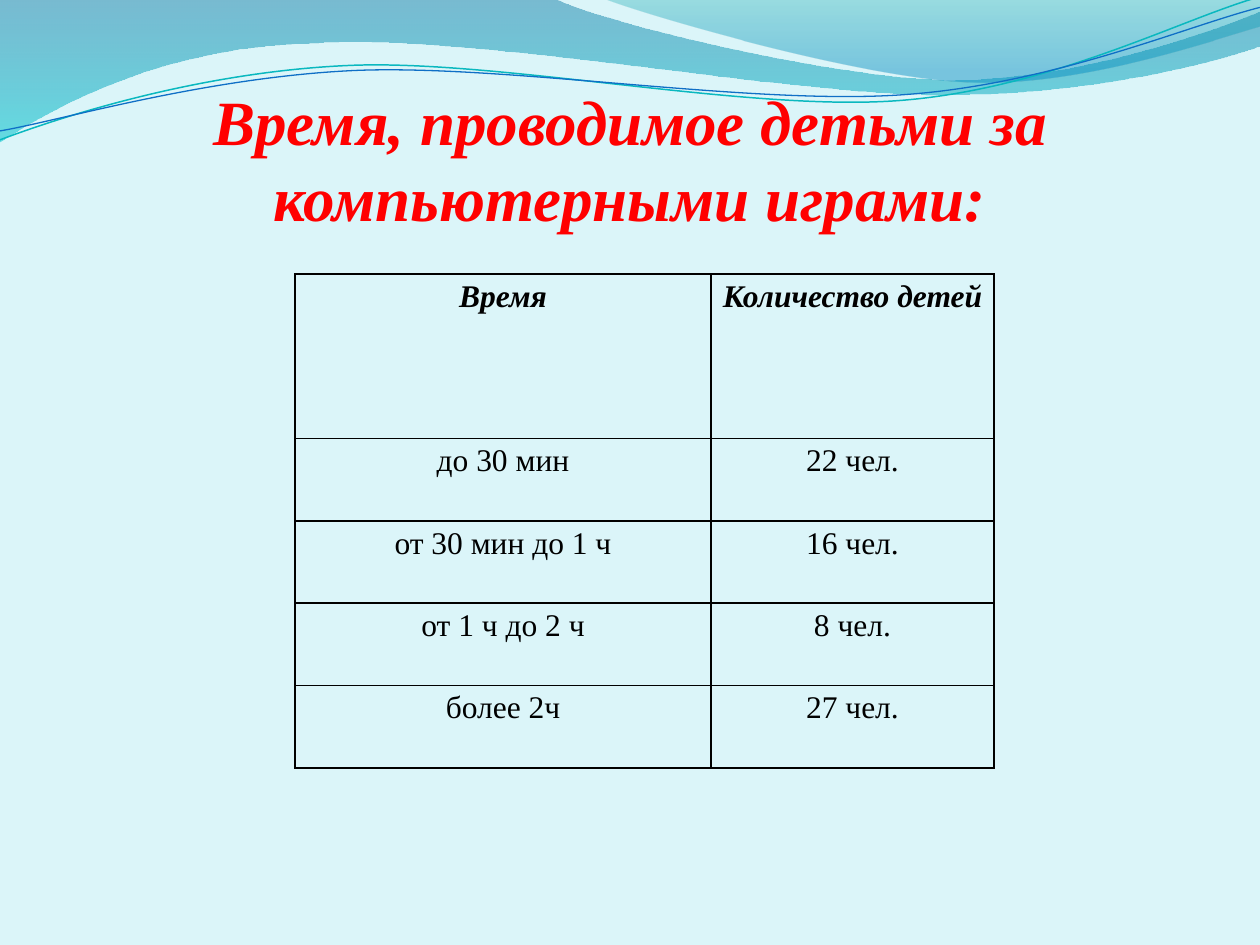
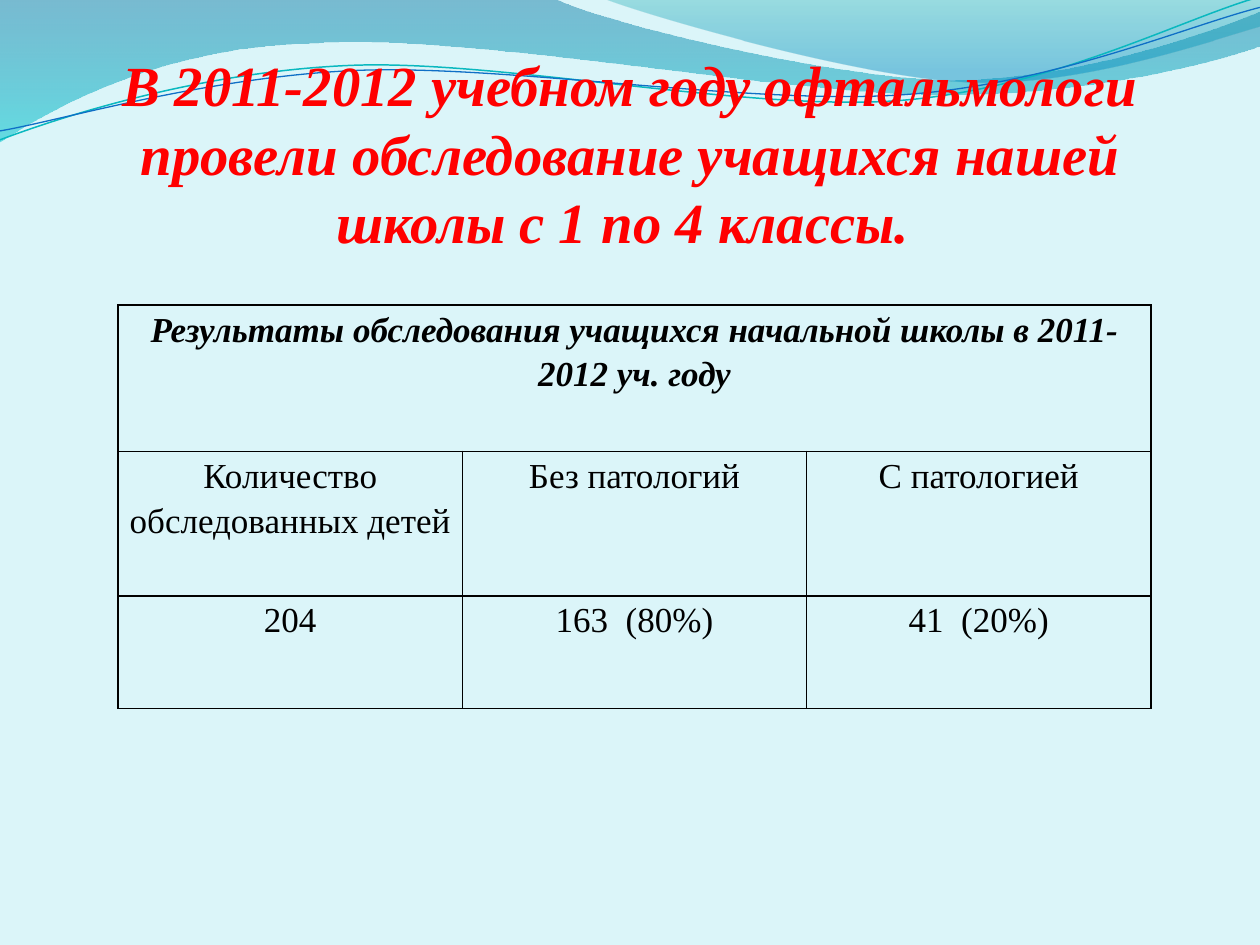
from dataclasses import dataclass

from lxml.etree import SubElement
from pptx import Presentation
from pptx.dml.color import RGBColor
from pptx.enum.text import MSO_ANCHOR, MSO_AUTO_SIZE, PP_ALIGN
from pptx.oxml.ns import qn
from pptx.util import Cm, Pt

FONT = "Times New Roman"
BACKGROUND = "DBF5F9"
TITLE_RED = "FF0000"
BLACK = "000000"

Point = tuple[float, float]
Segment = tuple[Point, ...]  # one point is a straight line, three a Bézier curve


@dataclass
class GradientStop:
    position: float
    color: str
    opacity: int


@dataclass
class Wave:
    """A band with a gradient, or an open line; points in centimetres."""
    start: Point
    segments: list[Segment]
    stops: tuple[GradientStop, ...] = ()
    line_color: str = ""
    line_width: float = 0


@dataclass
class TableSlide:
    title: str
    title_size: float
    title_top: float
    title_height: float
    table_left: float
    table_top: float
    column_widths: list[float]
    row_heights: list[float]
    font_size: int
    rows: list[list[str]]


WAVES = [
    Wave((0, 0),
         [((11.18, -0.03),),
          ((12.09, 0.43), (16.87, 1.6), (19.25, 1.6)),
          ((21.67, 1.6), (24.33, 0.66), (25.4, 0.23)),
          ((25.43, 0.91),),
          ((24.97, 1.12), (22.1, 1.93), (18.95, 1.91)),
          ((15.8, 1.91), (9.7, 0.71), (6.53, 0.86)),
          ((3.28, 0.91), (1.17, 2.11), (-0.03, 2.87)),
          ((0, 0),)],
         stops=(GradientStop(0, "0074A1", 45), GradientStop(1, "00C6CF", 55))),
    Wave((12.17, -0.03),
         [((12.93, 0.28), (17.32, 1.57), (19.53, 1.65)),
          ((21.74, 1.75), (24.41, 0.81), (25.4, 0.53)),
          ((25.4, 0),),
          ((12.17, -0.03),)],
         stops=(GradientStop(0, "00A1A9", 30), GradientStop(0.8, "008BBF", 45))),
    Wave((0, 2.82),
         [((1.22, 2.36), (4.01, 1.45), (7.04, 1.32)),
          ((10.03, 1.19), (15.06, 2.26), (18.11, 2.03)),
          ((21.16, 1.8), (23.83, 0.38), (25.35, -0.05))],
         line_color="0AB8BF", line_width=0.85),
    Wave((0, 2.64),
         [((1.19, 2.44), (4.17, 1.55), (7.19, 1.42)),
          ((10.24, 1.3), (15.16, 2.13), (18.21, 1.91)),
          ((21.23, 1.7), (23.9, 0.53), (25.4, 0.15))],
         line_color="0F6FC6", line_width=0.75),
]

TABLE_SLIDES = [
    TableSlide(
        "Время, проводимое детьми за компьютерными играми:", 36, 1.52, 3.2,
        5.95, 5.52, [8.38, 5.71], [3.32] + [1.66] * 4, 18,
        [["Время", "Количество детей"],
         ["до 30 мин", "22 чел."],
         ["от 30 мин до 1 ч", "16 чел."],
         ["от 1 ч до 2 ч", "8 чел."],
         ["более 2ч", "27 чел."]]),
    TableSlide(
        "В 2011-2012 учебном году офтальмологи провели обследование учащихся "
        "нашей школы с 1 по 4 классы. ", 32.4, 0.91, 4.22,
        2.38, 6.15, [6.94] * 3, [2.95, 2.91, 2.27], 20,
        [["Результаты обследования учащихся начальной школы в 2011-2012 уч. году"],
         ["Количество обследованных детей", "Без патологий", "С патологией"],
         ["204", "163  (80%)", "41  (20%)"]]),
]


def rgb(color: str) -> RGBColor:
    return RGBColor.from_string(color)


def bend_curves(shape, segments: list[Segment]) -> None:
    """Join each three straight steps of a curved segment into one Bézier curve."""
    steps = shape.element.iter(qn("a:lnTo"))
    steps = iter(list(steps))
    for segment in segments:
        first, *others = [next(steps) for _ in segment]
        if others:
            first.tag = qn("a:cubicBezTo")
        for step in others:
            first.extend(list(step))
            step.getparent().remove(step)


def draw_wave(slide, wave: Wave):
    start_x, start_y = wave.start
    builder = slide.shapes.build_freeform(Cm(start_x), Cm(start_y))
    builder.add_line_segments(
        [(Cm(x), Cm(y)) for segment in wave.segments for x, y in segment],
        close=bool(wave.stops))
    shape = builder.convert_to_shape()
    bend_curves(shape, wave.segments)
    shape.shadow.inherit = False
    if not wave.stops:
        shape.fill.background()
        shape.line.color.rgb = rgb(wave.line_color)
        shape.line.width = Pt(wave.line_width)
        return shape
    shape.line.fill.background()
    shape.fill.gradient()
    shape.fill.gradient_angle = 270
    for gradient_stop, stop in zip(shape.fill.gradient_stops, wave.stops):
        gradient_stop.position = stop.position
        gradient_stop.color.rgb = rgb(stop.color)
    for color, stop in zip(shape.element.iter(qn("a:srgbClr")), wave.stops):
        SubElement(color, qn("a:alpha"), val=str(stop.opacity * 1000))
    return shape


def write(paragraph, text: str, size: float, color: str, emphasis: bool) -> None:
    paragraph.alignment = PP_ALIGN.CENTER
    run = paragraph.add_run()
    run.text = text
    run.font.name = FONT
    run.font.size = Pt(size)
    run.font.bold = run.font.italic = emphasis
    run.font.color.rgb = rgb(color)


def place_title(slide, content: TableSlide) -> None:
    title = slide.shapes.title
    title.left, title.top = Cm(1.27), Cm(content.title_top)
    title.width, title.height = Cm(22.86), Cm(content.title_height)
    frame = title.text_frame
    frame.word_wrap = True
    frame.auto_size = MSO_AUTO_SIZE.NONE
    frame.vertical_anchor = MSO_ANCHOR.BOTTOM
    frame.margin_left = frame.margin_right = frame.margin_bottom = 0
    frame.margin_top = Cm(0.13)
    write(frame.paragraphs[0], content.title, content.title_size, TITLE_RED, True)


def format_cell(cell) -> None:
    cell.margin_left = cell.margin_right = Cm(0.18)
    cell.margin_top = cell.margin_bottom = 0
    cell.vertical_anchor = MSO_ANCHOR.TOP
    properties = cell._tc.get_or_add_tcPr()
    for side in ("a:lnL", "a:lnR", "a:lnT", "a:lnB"):
        border = SubElement(properties, qn(side), w=str(Pt(1)))
        fill = SubElement(border, qn("a:solidFill"))
        SubElement(fill, qn("a:srgbClr"), val=BLACK)
    cell.fill.background()


def add_table(slide, content: TableSlide) -> None:
    widths, heights = content.column_widths, content.row_heights
    table = slide.shapes.add_table(
        len(heights), len(widths), Cm(content.table_left), Cm(content.table_top),
        Cm(sum(widths)), Cm(sum(heights))).table
    table.first_row = table.horz_banding = False
    for column, width in zip(table.columns, widths):
        column.width = Cm(width)
    for row, height in zip(table.rows, heights):
        row.height = Cm(height)
    for cell in table.iter_cells():
        format_cell(cell)
    for row_index, texts in enumerate(content.rows):
        if len(texts) < len(widths):
            table.cell(row_index, 0).merge(table.cell(row_index, len(widths) - 1))
        for column_index, text in enumerate(texts):
            paragraph = table.cell(row_index, column_index).text_frame.paragraphs[0]
            paragraph.line_spacing = 1.15
            write(paragraph, text, content.font_size, BLACK, row_index == 0)


def decorate_layout(layout, slide) -> None:
    """Draw the background and waves once, on the layout all slides share."""
    layout.background.fill.solid()
    layout.background.fill.fore_color.rgb = rgb(BACKGROUND)
    for wave in WAVES:
        layout.shapes.element.append(draw_wave(slide, wave).element)


def main() -> None:
    presentation = Presentation()
    presentation.slide_width, presentation.slide_height = Cm(25.4), Cm(19.05)
    layout = presentation.slide_layouts.get_by_name("Title Only")
    slides = [presentation.slides.add_slide(layout) for _ in TABLE_SLIDES]
    decorate_layout(layout, slides[0])
    for slide, content in zip(slides, TABLE_SLIDES):
        place_title(slide, content)
        add_table(slide, content)
    presentation.save("out.pptx")


if __name__ == "__main__":
    main()
